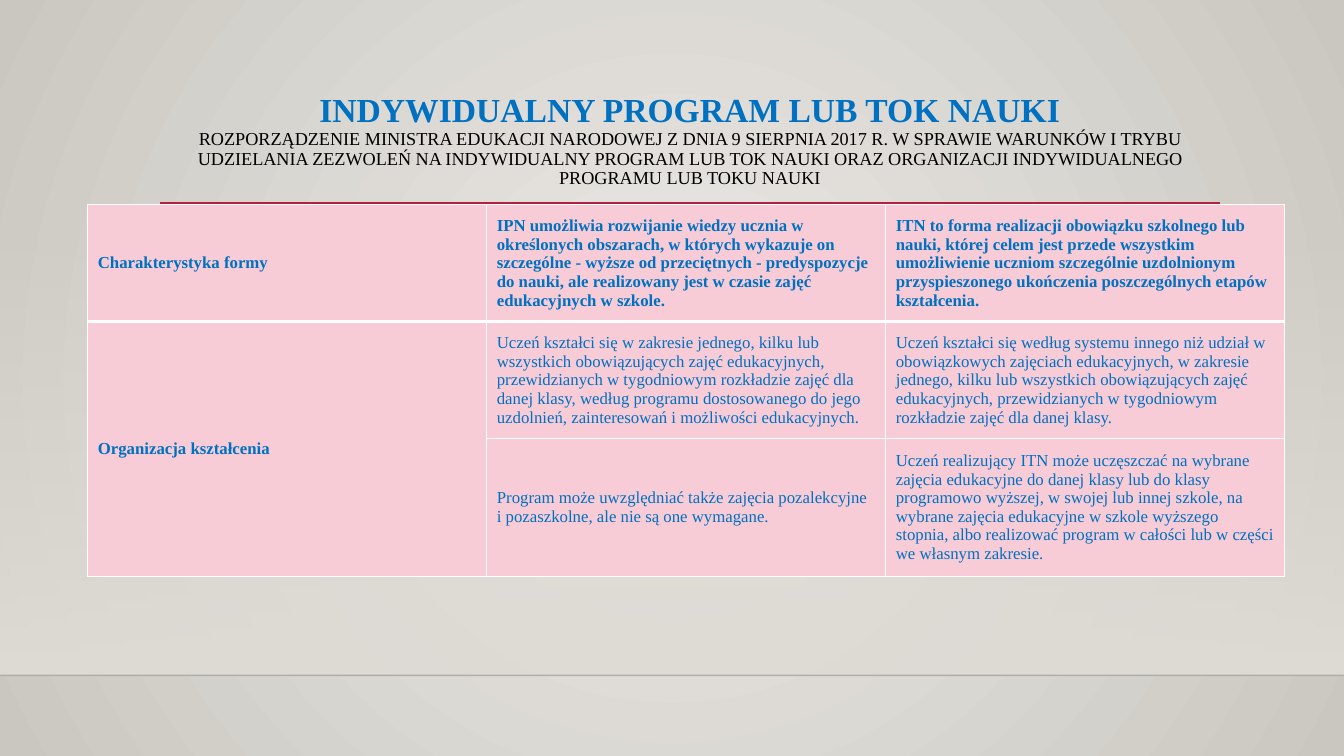
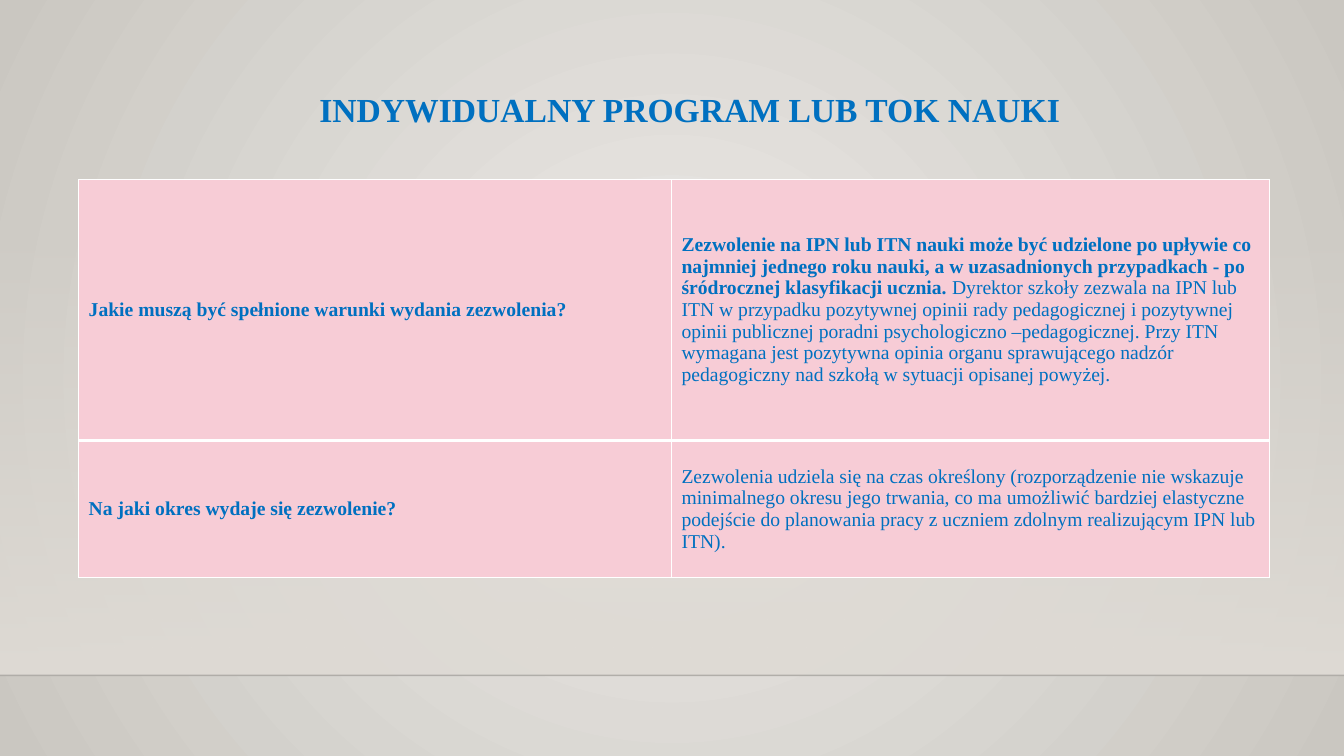
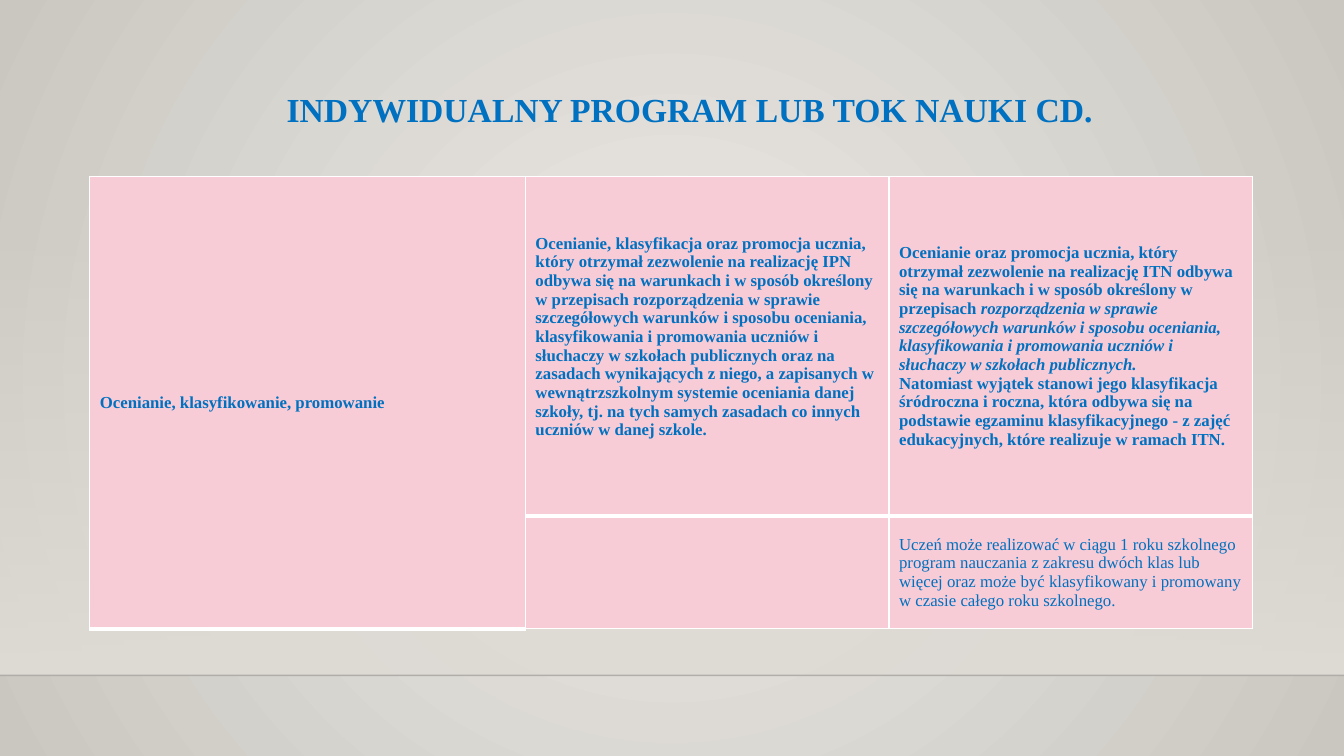
from lxml import etree
from pptx import Presentation
from pptx.dml.color import RGBColor
from pptx.enum.shapes import MSO_CONNECTOR, MSO_SHAPE
from pptx.enum.text import MSO_ANCHOR, MSO_AUTO_SIZE, PP_ALIGN
from pptx.oxml.ns import qn
from pptx.util import Inches, Pt

LINE = MSO_CONNECTOR.STRAIGHT
RECT = MSO_SHAPE.RECTANGLE
MIDDLE = MSO_ANCHOR.MIDDLE
TOP = MSO_ANCHOR.TOP
FIT = MSO_AUTO_SIZE.TEXT_TO_FIT_SHAPE
CENTER = PP_ALIGN.CENTER

FONT = "Times New Roman"
BLUE, BLACK, WHITE = "0070C0", "000000", "FFFFFF"
PINK, RED, SAND = "F7CCD6", "B71E42", "DFDBD5"
LIGHT, DARK = "ECEAE7", "CAC7C1"
HEAD = "INDYWIDUALNY PROGRAM LUB TOK NAUKI"


def color(code):
    return RGBColor.from_string(code)


def sub(node, tag, **attrs):
    return etree.SubElement(node, qn(tag), **attrs)


def blend(fill, first, last):
    fill.gradient()
    for stop, code in zip(fill.gradient_stops, (first, last)):
        stop.color.rgb = color(code)


def fade(node, share):
    sub(next(node.iter(qn("a:srgbClr"))), "a:alpha", val=str(share * 1000))


class Deck:
    """Holds the style and current slide; lengths are percent of the slide."""

    def __init__(self):
        self.prs = Presentation()
        self.prs.slide_width = Inches(13.33)
        self.prs.slide_height = Inches(7.5)
        self.slide = None
        self.backdrop()

    def x(self, share):
        return round(self.prs.slide_width * share / 100)

    def y(self, share):
        return round(self.prs.slide_height * share / 100)

    def box(self, left, top, width, height):
        return self.x(left), self.y(top), self.x(width), self.y(height)

    def backdrop(self):
        master = self.prs.slide_master
        blend(master.background.fill, LIGHT, DARK)
        grad = next(master.element.iter(qn("a:gradFill")))
        grad.remove(grad.find(qn("a:lin")))
        path = sub(grad, "a:path", path="circle")
        sub(path, "a:fillToRect", **dict.fromkeys("ltrb", "50000"))

    def start(self, title, note=""):
        self.slide = self.prs.slides.add_slide(self.prs.slide_layouts[6])
        self.band(0, 29.47, 100, 59.86)
        floor = self.rule(0, 100, 89.33, BLACK, 1)
        fade(floor.line._ln, 20)
        self.rule(11.93, 90.77, 26.93, RED, 2.5)
        self.title(title, note)

    def band(self, *place):
        shape = self.slide.shapes.add_shape(RECT, *self.box(*place))
        shape.shadow.inherit = False
        shape.line.fill.background()
        blend(shape.fill, SAND, SAND)
        shape.fill.gradient_angle = 270
        fade(shape.element.spPr, 0)

    def rule(self, left, right, top, code, width):
        line = self.slide.shapes.add_connector(
            LINE, self.x(left), self.y(top), self.x(right), self.y(top))
        line.line.color.rgb = color(code)
        line.line.width = Pt(width)
        sub(line._element.spPr, "a:effectLst")
        return line

    def run(self, para, text, size, style="", code=BLUE):
        run = para.add_run()
        run.text = text
        font = run.font
        font.name, font.size = FONT, Pt(size)
        font.bold, font.italic = "b" in style, "i" in style
        font.color.rgb = color(code)

    def title(self, text, note):
        place = self.box(11.93, 11.73, 78.77, 15.33)
        frame = self.slide.shapes.add_textbox(*place).text_frame
        frame.word_wrap = True
        frame.auto_size = FIT
        frame.vertical_anchor = TOP
        para = frame.paragraphs[0]
        para.alignment = CENTER
        para.line_spacing = 0.9
        self.run(para, text, 24, "b")
        if note:
            para.add_line_break()
            self.run(para, note, 13, code=BLACK)

    def edge(self, cell, low):
        props = cell._tc.get_or_add_tcPr()
        for spot, (side, width) in enumerate(zip("LRTB", (1, 1, 1, low))):
            line = etree.Element(qn("a:ln" + side), w=str(Pt(width)))
            sub(sub(line, "a:solidFill"), "a:srgbClr", val=WHITE)
            props.insert(spot, line)

    def cell(self, cell, paras, size, low):
        cell.vertical_anchor = MIDDLE
        cell.fill.solid()
        cell.fill.fore_color.rgb = color(PINK)
        self.edge(cell, low)
        frame = cell.text_frame
        for spot, runs in enumerate(paras or []):
            para = frame.add_paragraph() if spot else frame.paragraphs[0]
            for text, style in runs:
                self.run(para, text, size, style)

    def table(self, left, top, cols, rows, size, data):
        place = self.box(left, top, sum(cols), sum(rows))
        table = self.slide.shapes.add_table(len(rows), len(cols), *place).table
        table.first_row = table.horz_banding = False
        for col, width in zip(table.columns, cols):
            col.width = self.x(width)
        for row, height in zip(table.rows, rows):
            row.height = self.y(height)
        for r, line in enumerate(data):
            for c, paras in enumerate(line):
                self.cell(table.cell(r, c), paras, size, 1 if r else 3)
                if paras is None:
                    table.cell(r - 1, c).merge(table.cell(r, c))
        return table


def bold(text):
    return [[(text, "b")]]


def plain(text):
    return [[(text, "")]]


def main():
    deck = Deck()

    deck.start(HEAD, "ROZPORZĄDZENIE MINISTRA EDUKACJI NARODOWEJ Z DNIA 9 SIERPNIA 2017 R. "
               "W SPRAWIE WARUNKÓW I TRYBU UDZIELANIA ZEZWOLEŃ NA INDYWIDUALNY PROGRAM "
               "LUB TOK NAUKI ORAZ ORGANIZACJI INDYWIDUALNEGO PROGRAMU LUB TOKU NAUKI")
    deck.table(6.53, 27.07, [29.69] * 3, [15.47, 15.47, 18.2], 12, [
        [bold("Charakterystyka formy"),
         bold("IPN umożliwia rozwijanie wiedzy ucznia w określonych obszarach, w których "
              "wykazuje on szczególne - wyższe od przeciętnych - predyspozycje do nauki, "
              "ale realizowany jest w czasie zajęć edukacyjnych w szkole."),
         bold("ITN to forma realizacji obowiązku szkolnego lub nauki, której celem jest "
              "przede wszystkim umożliwienie uczniom szczególnie uzdolnionym "
              "przyspieszonego ukończenia poszczególnych etapów kształcenia.")],
        [bold("Organizacja kształcenia"),
         plain("Uczeń kształci się w zakresie jednego, kilku lub wszystkich obowiązujących "
               "zajęć edukacyjnych, przewidzianych w tygodniowym rozkładzie zajęć dla danej "
               "klasy, według programu dostosowanego do jego uzdolnień, zainteresowań i "
               "możliwości edukacyjnych."),
         plain("Uczeń kształci się według systemu innego niż udział w obowiązkowych "
               "zajęciach edukacyjnych, w zakresie jednego, kilku lub wszystkich "
               "obowiązujących zajęć edukacyjnych, przewidzianych w tygodniowym rozkładzie "
               "zajęć dla danej klasy.")],
        [None,
         plain("Program może uwzględniać także zajęcia pozalekcyjne i pozaszkolne, ale nie "
               "są one wymagane."),
         plain("Uczeń realizujący ITN może uczęszczać na wybrane zajęcia edukacyjne do "
               "danej klasy lub do klasy programowo wyższej, w swojej lub innej szkole, na "
               "wybrane zajęcia edukacyjne w szkole wyższego stopnia, albo realizować "
               "program w całości lub w części we własnym zakresie.")],
    ])

    deck.start(HEAD)
    deck.table(5.85, 23.73, [44.11, 44.49], [34.53, 18.13], 14, [
        [bold("Jakie muszą być spełnione warunki wydania zezwolenia?"),
         [[("Zezwolenie na IPN lub ITN nauki może być udzielone po upływie co najmniej "
            "jednego roku nauki, a w uzasadnionych przypadkach - po śródrocznej "
            "klasyfikacji ucznia.", "b"),
           (" Dyrektor szkoły zezwala na IPN lub ITN w przypadku pozytywnej opinii rady "
            "pedagogicznej i pozytywnej opinii publicznej poradni psychologiczno "
            "–pedagogicznej. Przy ITN wymagana jest pozytywna opinia organu sprawującego "
            "nadzór pedagogiczny nad szkołą w sytuacji opisanej powyżej.", "")]]],
        [bold("Na jaki okres wydaje się zezwolenie?"),
         plain("Zezwolenia udziela się na czas określony (rozporządzenie nie wskazuje "
               "minimalnego okresu jego trwania, co ma umożliwić bardziej elastyczne "
               "podejście do planowania pracy z uczniem zdolnym realizującym IPN lub ITN).")],
    ])

    deck.start(HEAD + " CD.")
    grades = deck.table(6.68, 23.33, [32.41, 27.06, 27.06], [44.93, 14.93], 12, [
        [bold("Ocenianie, klasyfikowanie, promowanie"),
         bold("Ocenianie, klasyfikacja oraz promocja ucznia, który otrzymał zezwolenie na "
              "realizację IPN odbywa się na warunkach i w sposób określony w przepisach "
              "rozporządzenia w sprawie szczegółowych warunków i sposobu oceniania, "
              "klasyfikowania i promowania uczniów i słuchaczy w szkołach publicznych oraz "
              "na zasadach wynikających z niego, a zapisanych w wewnątrzszkolnym systemie "
              "oceniania danej szkoły, tj. na tych samych zasadach co innych uczniów w "
              "danej szkole."),
         [[("Ocenianie oraz promocja ucznia, który otrzymał zezwolenie na realizację ITN "
            "odbywa się na warunkach i w sposób określony w przepisach ", "b"),
           ("rozporządzenia w sprawie szczegółowych warunków i sposobu oceniania, "
            "klasyfikowania i promowania uczniów i słuchaczy w szkołach publicznych.", "bi")],
          [("Natomiast wyjątek stanowi jego klasyfikacja śródroczna i roczna, która odbywa "
            "się na podstawie egzaminu klasyfikacyjnego - z zajęć edukacyjnych, które "
            "realizuje w ramach ITN.", "b")]]],
        [None,
         [],
         plain("Uczeń może realizować w ciągu 1 roku szkolnego program nauczania z zakresu "
               "dwóch klas lub więcej oraz może być klasyfikowany i promowany w czasie "
               "całego roku szkolnego.")],
    ])
    grades.cell(0, 1).margin_bottom = deck.y(3.13)

    deck.prs.save("out.pptx")


if __name__ == "__main__":
    main()
